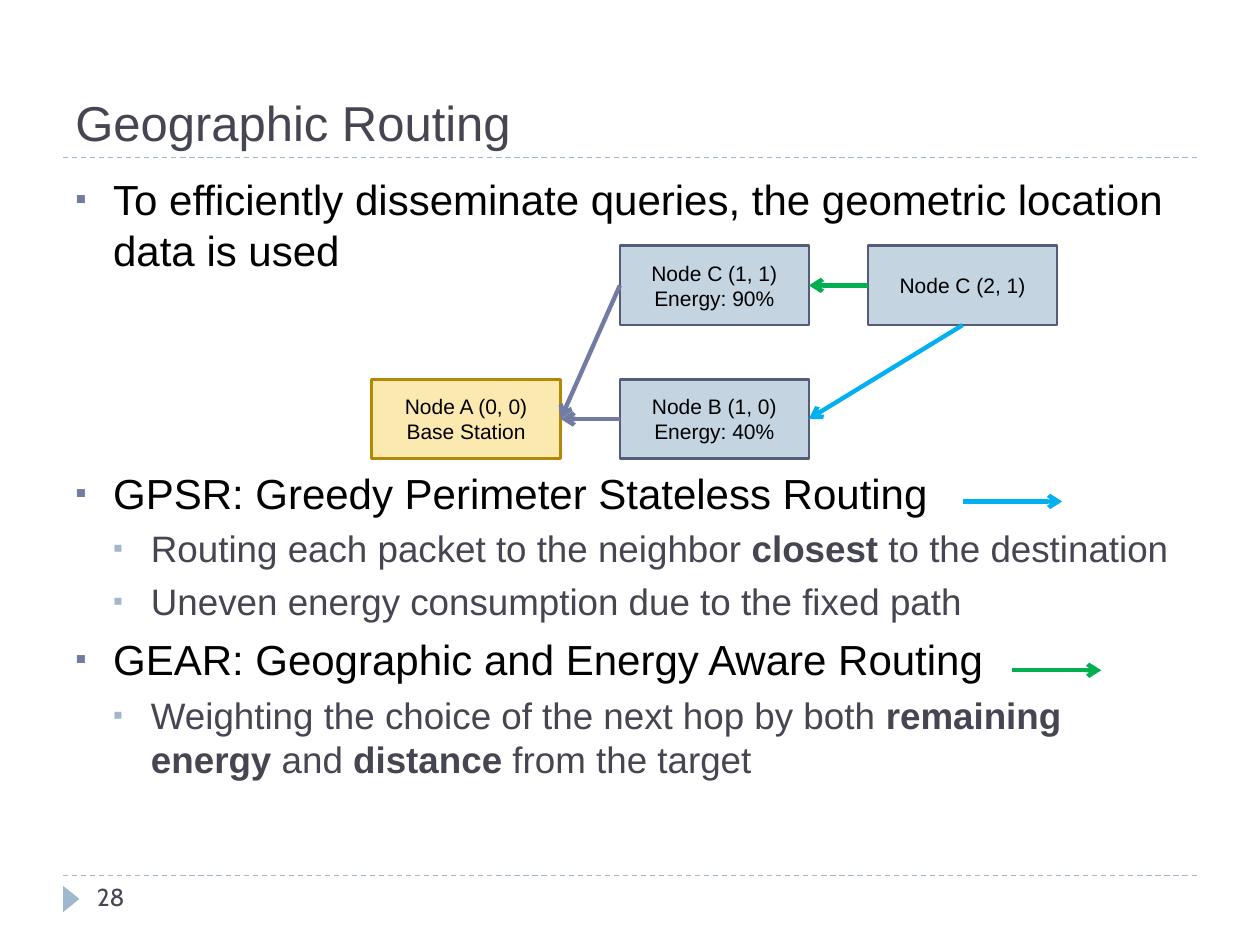
from lxml.etree import SubElement
from pptx import Presentation
from pptx.dml.color import RGBColor
from pptx.enum.dml import MSO_LINE
from pptx.enum.shapes import MSO_CONNECTOR, MSO_SHAPE
from pptx.enum.text import MSO_ANCHOR, PP_ALIGN
from pptx.oxml.ns import qn
from pptx.util import Inches, Pt

# Palette
SLATE, PALE_BLUE, VIOLET = "464653", "9FB8CD", "727CA3"
BLACK, GPSR_BLUE, GEAR_GREEN = "000000", "00B0F0", "00B050"
NODE_COLORS = ("C5D4E1", "545C79")
BASE_COLORS = ("FCE9AF", "B38807")

# Node grid
GRID_LEFT, GRID_TOP = 2.95, 1.95
COLUMN_STEP, ROW_STEP = 1.97, 1.06
NODE_WIDTH, NODE_HEIGHT = 1.5, 0.63
TOP, LEFT, BOTTOM, RIGHT = range(4)

# Level: size, text colour, bullet colour, space before
LEVELS = [(24, BLACK, VIOLET, 6), (21, SLATE, PALE_BLUE, 5)]
DIAGRAM_GAP = 110

# Level, space before (None for the usual), runs as (text, bold)
BODY = [
    (0, None, [("To efficiently disseminate queries, the geometric location data is used", False)]),
    (0, DIAGRAM_GAP, [("GPSR: Greedy Perimeter Stateless Routing", False)]),
    (1, None, [("Routing each packet to the neighbor ", False), ("closest", True),
               (" to the destination", False)]),
    (1, None, [("Uneven energy consumption due to the fixed path", False)]),
    (0, None, [("GEAR: Geographic and Energy Aware Routing", False)]),
    (1, None, [("Weighting the choice of the next hop by both ", False),
               ("remaining energy ", True), ("and ", False), ("distance", True),
               (" from the target", False)]),
]

# Name: column, row, text, (fill, outline)
NODES = {
    "base": (0, 1, "Node A (0, 0)\nBase Station", BASE_COLORS),
    "upper": (1, 0, "Node C (1, 1)\nEnergy: 90%", NODE_COLORS),
    "lower": (1, 1, "Node B (1, 0)\nEnergy: 40%", NODE_COLORS),
    "source": (2, 0, "Node C (2, 1)", NODE_COLORS),
}

# Start node and side, end node and side, colour
ROUTES = [
    ("lower", LEFT, "base", RIGHT, VIOLET),
    ("upper", LEFT, "base", RIGHT, VIOLET),
    ("source", BOTTOM, "lower", RIGHT, GPSR_BLUE),
    ("source", LEFT, "upper", RIGHT, GEAR_GREEN),
]


def color(hex_text):
    return RGBColor.from_string(hex_text)


def format_runs(paragraph, size, hex_text, font="Arial"):
    for run in paragraph.runs:
        run.font.name = font
        run.font.size = Pt(size)
        run.font.color.rgb = color(hex_text)


def add_text_box(slide, left, top, width, height, anchor=MSO_ANCHOR.TOP):
    box = slide.shapes.add_textbox(*map(Inches, (left, top, width, height)))
    frame = box.text_frame
    frame.word_wrap = True
    frame.vertical_anchor = anchor
    return frame


def add_label(slide, text, box, size, font, anchor=MSO_ANCHOR.TOP):
    frame = add_text_box(slide, *box, anchor)
    frame.text = text
    format_runs(frame.paragraphs[0], size, SLATE, font)


def add_bullet(paragraph, level, hex_text):
    properties = paragraph._p.get_or_add_pPr()
    properties.set("marL", str(Inches(0.3 * (level + 1))))
    properties.set("indent", str(Inches(-0.3)))
    bullet_color = SubElement(properties, qn("a:buClr"))
    SubElement(bullet_color, qn("a:srgbClr"), val=hex_text)
    SubElement(properties, qn("a:buSzPct"), val="76000")
    SubElement(properties, qn("a:buFont"), typeface="Arial")
    SubElement(properties, qn("a:buChar"), char="▪")


def add_body(slide):
    frame = add_text_box(slide, 0.5, 1.33, 9, 5.4)
    for index, (level, gap, runs) in enumerate(BODY):
        paragraph = frame.add_paragraph() if index else frame.paragraphs[0]
        size, text_color, bullet_color, usual_gap = LEVELS[level]
        paragraph.level = level
        paragraph.space_before = Pt(gap or usual_gap)
        add_bullet(paragraph, level, bullet_color)
        for text, bold in runs:
            run = paragraph.add_run()
            run.text = text
            run.font.bold = bold
        format_runs(paragraph, size, text_color)


def add_shape(slide, preset, box, fill):
    shape = slide.shapes.add_shape(preset, *map(Inches, box))
    shape.shadow.inherit = False
    shape.fill.solid()
    shape.fill.fore_color.rgb = color(fill)
    return shape


def add_node(slide, column, row, text, colors):
    fill, outline = colors
    box = (GRID_LEFT + column * COLUMN_STEP, GRID_TOP + row * ROW_STEP, NODE_WIDTH, NODE_HEIGHT)
    node = add_shape(slide, MSO_SHAPE.RECTANGLE, box, fill)
    node.line.color.rgb = color(outline)
    node.line.width = Pt(1.5)
    frame = node.text_frame
    frame.vertical_anchor = MSO_ANCHOR.MIDDLE
    frame.text = text
    for paragraph in frame.paragraphs:
        paragraph.alignment = PP_ALIGN.CENTER
        format_runs(paragraph, 12, BLACK)
    return node


def add_line(slide, start, end, hex_text, width):
    line = slide.shapes.add_connector(MSO_CONNECTOR.STRAIGHT, *map(Inches, (*start, *end)))
    line.line.color.rgb = color(hex_text)
    line.line.width = Pt(width)
    SubElement(line._element.spPr, qn("a:effectLst"))
    return line


def add_rule(slide, top):
    rule = add_line(slide, (0.5, top), (9.5, top), PALE_BLUE, 0.75)
    rule.line.dash_style = MSO_LINE.DASH


def add_arrow(slide, hex_text, start=(0, 0), end=(0, 0)):
    arrow = add_line(slide, start, end, hex_text, 2.5)
    SubElement(arrow.line._get_or_add_ln(), qn("a:tailEnd"), type="arrow")
    return arrow


def main():
    presentation = Presentation()
    presentation.slide_width, presentation.slide_height = Inches(10), Inches(7.5)
    slide = presentation.slides.add_slide(presentation.slide_layouts[6])

    # Rules and page marker
    for top in (6.95, 1.25):
        add_rule(slide, top)
    marker = add_shape(slide, MSO_SHAPE.ISOSCELES_TRIANGLE, (0.46, 7.07, 0.21, 0.13), PALE_BLUE)
    marker.line.fill.background()
    marker.rotation = 90

    # Title, page number and bullets
    add_label(slide, "Geographic Routing", (0.5, 0.17, 9, 1.08), 28, "Arial", MSO_ANCHOR.BOTTOM)
    add_label(slide, "28", (0.67, 6.95, 2.17, 0.4), 14, "Cabin")
    add_body(slide)

    # Routing diagram
    nodes = {name: add_node(slide, *details) for name, details in NODES.items()}
    for start, start_side, end, end_side, hex_text in ROUTES:
        arrow = add_arrow(slide, hex_text)
        arrow.begin_connect(nodes[start], start_side)
        arrow.end_connect(nodes[end], end_side)

    # Colour key beside the protocol names
    add_arrow(slide, GPSR_BLUE, (7.64, 3.98), (8.43, 3.98))
    add_arrow(slide, GEAR_GREEN, (8.03, 5.32), (8.74, 5.32))

    presentation.save("out.pptx")


if __name__ == "__main__":
    main()
